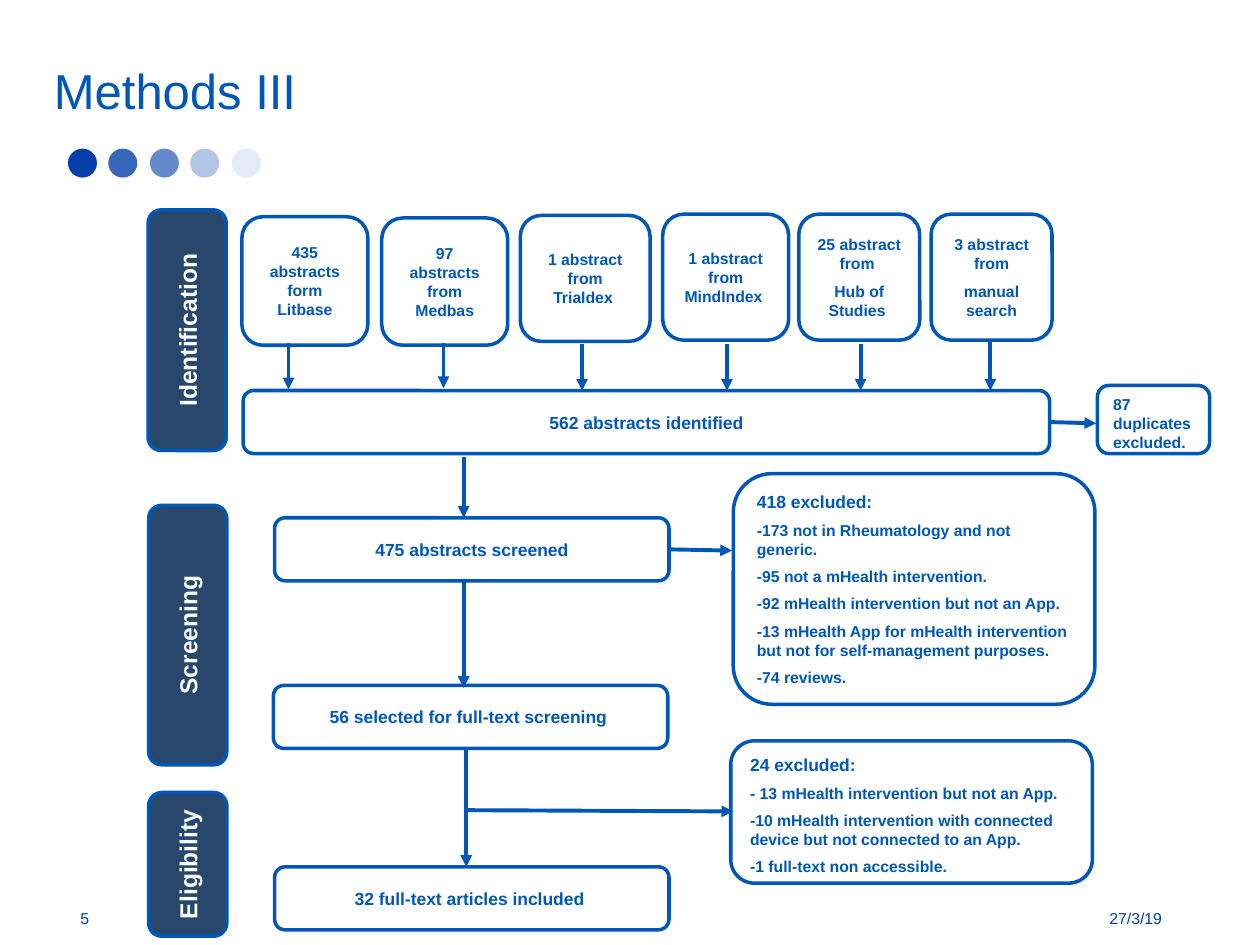
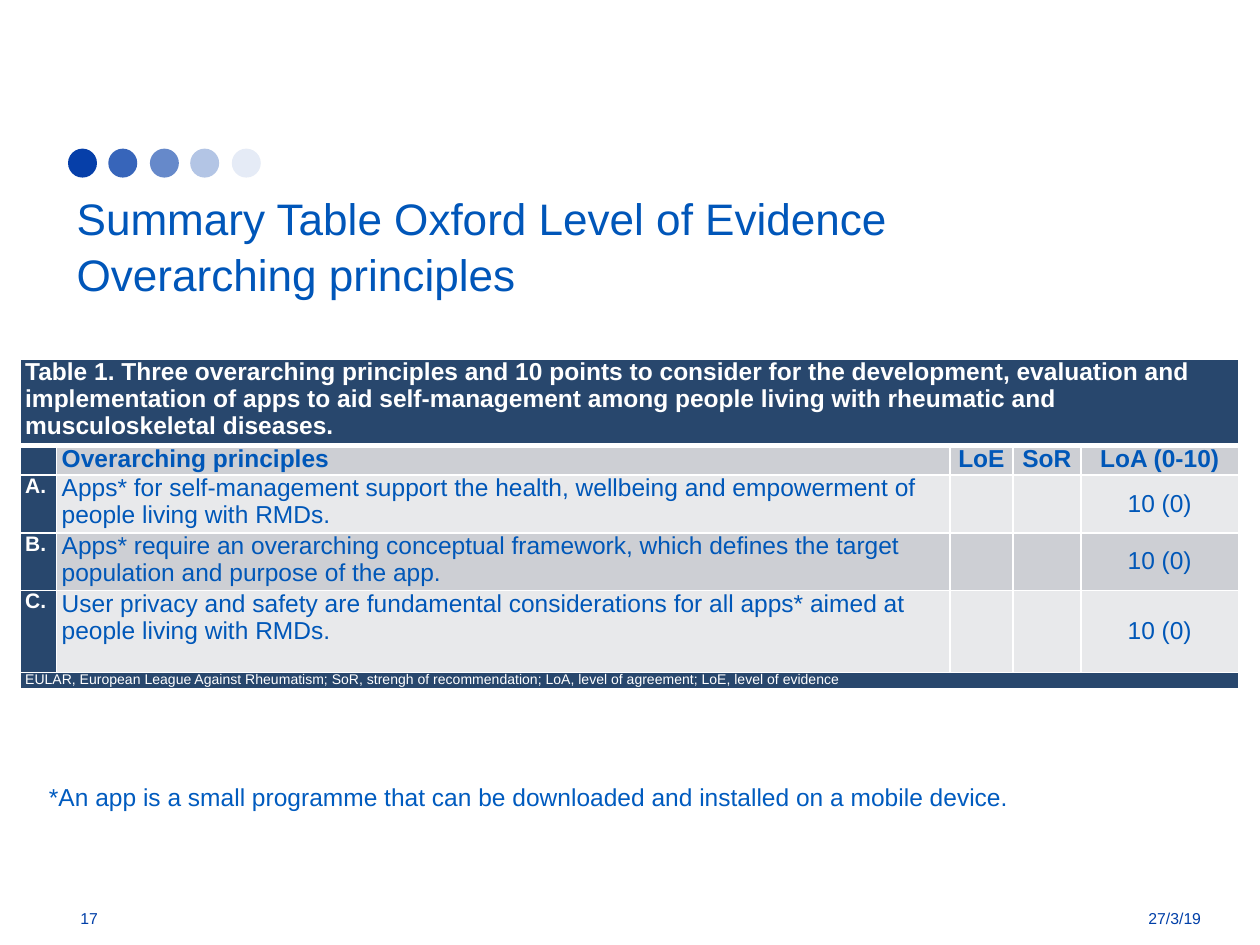
from typing import NamedTuple

from lxml.etree import SubElement
from pptx import Presentation
from pptx.dml.color import RGBColor
from pptx.enum.shapes import MSO_CONNECTOR as Link, MSO_SHAPE as Kind
from pptx.enum.text import MSO_ANCHOR as Anchor, PP_ALIGN as Align
from pptx.oxml.ns import qn
from pptx.util import Emu, Pt

SCALE = 9144
FONT = "Arial"
BLUE = "0057B8"
TITLE = "0056B9"
FOOT = "003FA8"
DOT = "063FA9"
NOTE = "005BBF"
NAVY = "28476D"
WHITE = "FFFFFF"
DARK = "CDCFD4"
LIGHT = "E8E9EB"


class Box(NamedTuple):
    x: int
    y: int
    w: int
    h: int
    text: str
    size: int = 9
    head: int = 0
    align: Align = Align.CENTER
    anchor: Anchor = Anchor.MIDDLE


class Stage(NamedTuple):
    x: int
    y: int
    w: int
    h: int
    text: str


class Arrow(NamedTuple):
    x1: int
    y1: int
    x2: int
    y2: int


class Row(NamedTuple):
    high: int
    fill: str
    mark: str
    text: str
    score: str


SOURCES = [
    Box(192, 172, 100, 102, "435 abstracts form Litbase"),
    Box(303, 173, 100, 101, "97 abstracts from Medbas"),
    Box(413, 171, 103, 100, "1 abstract from Trialdex "),
    Box(526, 170, 100, 100, "1 abstract from MindIndex "),
    Box(634, 170, 96, 100, "25 abstract from \nHub of Studies "),
    Box(739, 170, 96, 100, "3 abstract from\nmanual search"),
]
STEPS = [
    Box(193, 310, 640, 50, "562 abstracts identified", 10),
    Box(218, 411, 313, 50, "475 abstracts screened", 10),
    Box(217, 544, 313, 50, "56 selected for full-text screening ", 10),
    Box(218, 688, 313, 50, "32 full-text articles included ", 10),
]
DROPPED = [
    Box(871, 306, 89, 54, "87 duplicates excluded.", 9, 0, Align.LEFT, Anchor.TOP),
    Box(582, 376, 287, 183,
        "418 excluded:\n"
        "-173 not in Rheumatology and not generic.\n"
        "-95 not a mHealth intervention.\n"
        "-92 mHealth intervention but not an App.\n"
        "-13 mHealth App for mHealth intervention but not for self-management purposes.\n"
        "-74 reviews.", 9, 10, Align.LEFT, Anchor.TOP),
    Box(580, 588, 287, 113,
        "24 excluded:\n"
        "- 13 mHealth intervention but not an App.\n"
        "-10 mHealth intervention with connected device but not connected to an App.\n"
        "-1 full-text non accessible.", 9, 10, Align.LEFT, Anchor.TOP),
]
STAGES = [
    Stage(53, 231, 191, 62, "Identification"),
    Stage(46, 473, 206, 62, "Screening"),
    Stage(92, 655, 114, 62, "Eligibility"),
]
ARROWS = [
    Arrow(229, 272, 229, 309),
    Arrow(352, 272, 352, 308),
    Arrow(462, 273, 462, 310),
    Arrow(577, 273, 577, 310),
    Arrow(683, 273, 683, 310),
    Arrow(786, 270, 786, 310),
    Arrow(834, 335, 870, 336),
    Arrow(368, 363, 368, 411),
    Arrow(530, 436, 581, 437),
    Arrow(368, 461, 368, 546),
    Arrow(370, 643, 582, 644),
    Arrow(370, 594, 370, 688),
]
WIDTHS = [29, 709, 50, 54, 125]
CAPTION = (
    "Table 1. Three overarching principles and 10 points to consider for the "
    "development, evaluation and implementation of apps to aid self-management "
    "among people living with rheumatic and musculoskeletal diseases."
)
LEGEND = (
    "EULAR, European League Against Rheumatism; SoR, strengh of recommendation; "
    "LoA, level of agreement; LoE, level of evidence"
)
ROWS = [
    Row(44, LIGHT, "A.", "Apps* for self-management support the health, wellbeing "
        "and empowerment of people living with RMDs.", "10 (0)"),
    Row(44, DARK, "B.", "Apps* require an overarching conceptual framework, which "
        "defines the target population and purpose of the app.", "10 (0)"),
    Row(65, LIGHT, "C.", "User privacy and safety are fundamental considerations for "
        "all apps* aimed at people living with RMDs.", "10 (0)"),
]


def px(n: int) -> Emu:
    return Emu(n * SCALE)


def paint(color, code: str) -> None:
    color.rgb = RGBColor.from_string(code)


def fill(part, code: str) -> None:
    part.fill.solid()
    paint(part.fill.fore_color, code)


def write(frame, text: str, *, size: float, color: str, bold: bool = False,
          align=Align.LEFT, head: float = 0, gap: float = 0, lead: float = 1) -> None:
    frame.word_wrap = True
    for i, words in enumerate(text.split("\n")):
        para = frame.paragraphs[0] if i == 0 else frame.add_paragraph()
        para.alignment = align
        para.line_spacing = lead
        para.space_before = Pt(gap if i else 0)
        if not words:
            SubElement(para._p, qn("a:endParaRPr"), sz=str(int(size * 100)))
            continue
        run = para.add_run()
        run.text = words
        run.font.name = FONT
        run.font.size = Pt(head if head and i == 0 else size)
        run.font.bold = bold
        paint(run.font.color, color)


def label(slide, x: int, y: int, w: int, h: int, text: str,
          anchor=Anchor.MIDDLE, top: int = 5, **style) -> None:
    frame = slide.shapes.add_textbox(px(x), px(y), px(w), px(h)).text_frame
    frame.vertical_anchor = anchor
    frame.margin_top = px(top)
    write(frame, text, **style)


def panel(slide, x: int, y: int, w: int, h: int):
    shape = slide.shapes.add_shape(Kind.ROUNDED_RECTANGLE, px(x), px(y), px(w), px(h))
    shape.shadow.inherit = False
    shape.fill.background()
    paint(shape.line.color, BLUE)
    shape.line.width = Pt(2)
    return shape


def draw_box(slide, box: Box) -> None:
    frame = panel(slide, box.x, box.y, box.w, box.h).text_frame
    frame.vertical_anchor = box.anchor
    write(frame, box.text, size=box.size, head=box.head, color=BLUE, bold=True,
          align=box.align, gap=4.8)


def draw_stage(slide, stage: Stage) -> None:
    shape = panel(slide, stage.x, stage.y, stage.w, stage.h)
    fill(shape, NAVY)
    shape.rotation = 270
    shape.text_frame.vertical_anchor = Anchor.MIDDLE
    write(shape.text_frame, stage.text, size=14, color=WHITE, bold=True, align=Align.CENTER)


def draw_arrow(slide, arrow: Arrow) -> None:
    link = slide.shapes.add_connector(Link.STRAIGHT, *map(px, arrow))
    paint(link.line.color, BLUE)
    link.line.width = Pt(2.25)
    SubElement(link.line._get_or_add_ln(), qn("a:tailEnd"), type="triangle")
    SubElement(link._element.spPr, qn("a:effectLst"))


def draw_dots(slide) -> None:
    for i, alpha in enumerate((100, 80, 61, 30, 10)):
        dot = slide.shapes.add_shape(Kind.OVAL, px(54 + 65 * i // 2), px(118), px(23), px(23))
        dot.shadow.inherit = False
        fill(dot, DOT)
        dot.line.fill.background()
        tone = dot._element.spPr.find(qn("a:solidFill"))[0]
        SubElement(tone, qn("a:alpha"), val=str(alpha * 1000))


def start(deck, title: str, x: int, y: int, size: float, page: str, date: int):
    slide = deck.slides.add_slide(deck.slide_layouts[6])
    draw_dots(slide)
    label(slide, x, y, 911, 69, title, Anchor.TOP, 8, size=size, color=TITLE, lead=1.05)
    label(slide, 54, 709, 96, 40, page, size=9, color=FOOT)
    label(slide, date, 709, 134, 40, "27/3/19", size=9, color=FOOT, align=Align.RIGHT)
    return slide


def edge(cell, foot: float) -> None:
    props = cell._tc.get_or_add_tcPr()
    for side, width in (("L", 1), ("R", 1), ("T", 1), ("B", foot)):
        line = SubElement(props, qn(f"a:ln{side}"), w=str(Pt(width)))
        tone = SubElement(line, qn("a:solidFill"))
        SubElement(tone, qn("a:srgbClr"), val=WHITE)


def draw_cell(cell, text: str, back: str, foot: float = 1, anchor=Anchor.TOP, **style) -> None:
    edge(cell, foot)
    fill(cell, back)
    cell.margin_left = cell.margin_right = px(4)
    cell.margin_top = cell.margin_bottom = 0
    cell.vertical_anchor = anchor
    write(cell.text_frame, text, lead=0.98, **style)


def draw_band(table, row: int, text: str, foot: float, **style) -> None:
    last = len(WIDTHS) - 1
    table.cell(row, 0).merge(table.cell(row, last))
    for col in range(last + 1):
        draw_cell(table.cell(row, col), "" if col else text, NAVY, foot, color=WHITE, **style)


def draw_table(slide) -> None:
    highs = [65, 22, *(row.high for row in ROWS), 13]
    grid = slide.shapes.add_table(len(highs), len(WIDTHS), px(16), px(285),
                                  px(sum(WIDTHS)), px(sum(highs)))
    table = grid.table
    table.first_row = table.horz_banding = False
    for col, width in zip(table.columns, WIDTHS):
        col.width = px(width)
    for row, high in zip(table.rows, highs):
        row.height = px(high)
    draw_band(table, 0, CAPTION, 3, size=14, bold=True)
    heads = ["", "Overarching principles", "LoE", "SoR", "LoA (0-10)"]
    for col, text in enumerate(heads):
        draw_cell(table.cell(1, col), text, DARK if col else NAVY, size=14, color=BLUE,
                  bold=True, align=Align.CENTER if col > 1 else Align.LEFT)
    for i, row in enumerate(ROWS, 2):
        draw_cell(table.cell(i, 0), row.mark, NAVY, size=12, color=WHITE, bold=True)
        draw_cell(table.cell(i, 1), row.text, row.fill, size=14, color=BLUE)
        for col, text in enumerate(("", "", row.score), 2):
            draw_cell(table.cell(i, col), text, row.fill, anchor=Anchor.MIDDLE,
                      size=14, color=BLUE, align=Align.CENTER)
    draw_band(table, len(highs) - 1, LEGEND, 1, size=8)


def main() -> None:
    deck = Presentation()
    deck.slide_width, deck.slide_height = px(1000), px(750)

    flow = start(deck, "Methods III", 33, 38, 28, "5", 798)
    for box in SOURCES + STEPS + DROPPED:
        draw_box(flow, box)
    for arrow in ARROWS:
        draw_arrow(flow, arrow)
    for stage in STAGES:
        draw_stage(flow, stage)

    title = "Summary Table Oxford Level of Evidence\nOverarching principles"
    facts = start(deck, title, 51, 142, 25.2, "17", 829)
    draw_table(facts)
    label(facts, 29, 604, 880, 45,
          "*An app is a small programme that can be downloaded and installed on a mobile device.",
          Anchor.TOP, size=14, color=NOTE, align=Align.JUSTIFY, lead=1.5)

    deck.save("out.pptx")


if __name__ == "__main__":
    main()
